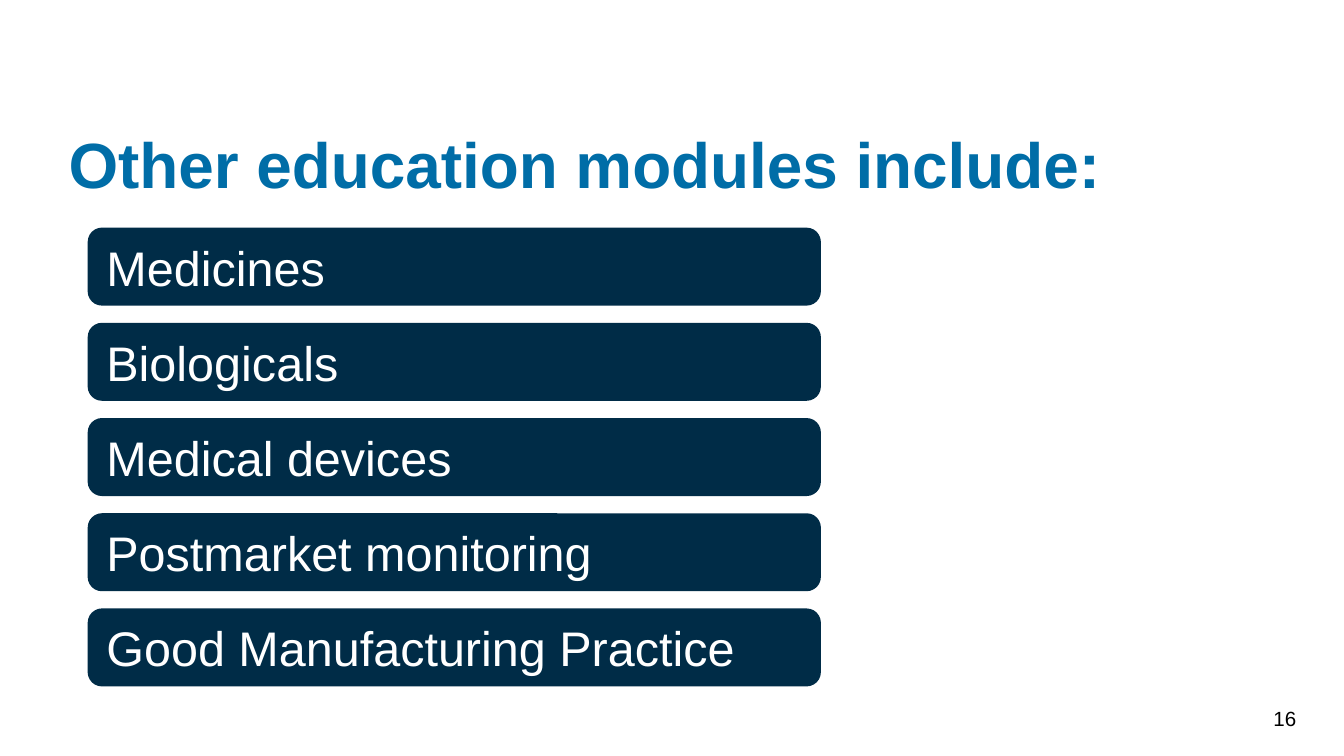
"""Build the slide that lists the other education modules."""
from pptx import Presentation
from pptx.dml.color import RGBColor
from pptx.enum.shapes import MSO_SHAPE
from pptx.enum.text import MSO_ANCHOR, MSO_AUTO_SIZE, PP_ALIGN
from pptx.util import Pt

EMU_PER_PX = 9525
TITLE_ONLY_LAYOUT = 5
ROUNDED = MSO_SHAPE.ROUNDED_RECTANGLE
TOP, MIDDLE = MSO_ANCHOR.TOP, MSO_ANCHOR.MIDDLE
NO_AUTOFIT = MSO_AUTO_SIZE.NONE
LEFT, RIGHT = PP_ALIGN.LEFT, PP_ALIGN.RIGHT

FONT = "Arial"
COLOURS = {"title": "006DA7", "bar": "002C47", "bar_text": "FFFFFF", "number": "000000"}
MODULES = [
    "Medicines",
    "Biologicals",
    "Medical devices",
    "Postmarket monitoring",
    "Good Manufacturing Practice",
]
BAR_LEFT, BAR_TOP, BAR_WIDTH, BAR_HEIGHT, BAR_STEP = 64, 164, 521, 53, 68


def px(length):
    """Turn whole pixels into EMU."""
    return length * EMU_PER_PX


def colour(name):
    """Look up a named colour."""
    return RGBColor.from_string(COLOURS[name])


def write_text(shape, text, size, colour_name, anchor, align=LEFT, bold=False):
    """Put one formatted run into a shape."""
    frame = shape.text_frame
    frame.word_wrap = True
    frame.auto_size = NO_AUTOFIT
    frame.vertical_anchor = anchor
    paragraph = frame.paragraphs[0]
    paragraph.alignment = align
    run = paragraph.add_run()
    run.text = text
    run.font.name = FONT
    run.font.size = Pt(size)
    run.font.bold = bold
    run.font.color.rgb = colour(colour_name)


def clear_margins(shape):
    """Remove the inner margins of a shape."""
    frame = shape.text_frame
    frame.margin_left = frame.margin_right = 0
    frame.margin_top = frame.margin_bottom = 0


def add_title(slide, text):
    """Place and fill the title placeholder."""
    title = slide.shapes.title
    title.left, title.top = px(49), px(88)
    title.width, title.height = px(870), px(57)
    clear_margins(title)
    write_text(title, text, 34.2, "title", MIDDLE, bold=True)


def add_slide_number(slide, text):
    """Add the slide number at the lower right."""
    number = slide.shapes.add_textbox(px(688), px(504), px(238), px(29))
    clear_margins(number)
    write_text(number, text, 11, "number", TOP, RIGHT)


def add_module_bar(slide, index, text):
    """Add one rounded bar of the module list."""
    top = BAR_TOP + index * BAR_STEP
    bar = slide.shapes.add_shape(
        ROUNDED, px(BAR_LEFT), px(top), px(BAR_WIDTH), px(BAR_HEIGHT)
    )
    bar.shadow.inherit = False
    bar.fill.solid()
    bar.fill.fore_color.rgb = colour("bar")
    bar.line.color.rgb = colour("bar")
    bar.line.width = Pt(2)
    write_text(bar, text, 26, "bar_text", MIDDLE)


def main():
    """Build and save the presentation."""
    presentation = Presentation()
    presentation.slide_width, presentation.slide_height = px(960), px(540)
    layout = presentation.slide_layouts[TITLE_ONLY_LAYOUT]
    slide = presentation.slides.add_slide(layout)
    add_title(slide, "Other education modules include:")
    add_slide_number(slide, "16")
    for index, module in enumerate(MODULES):
        add_module_bar(slide, index, module)
    presentation.save("out.pptx")


if __name__ == "__main__":
    main()
